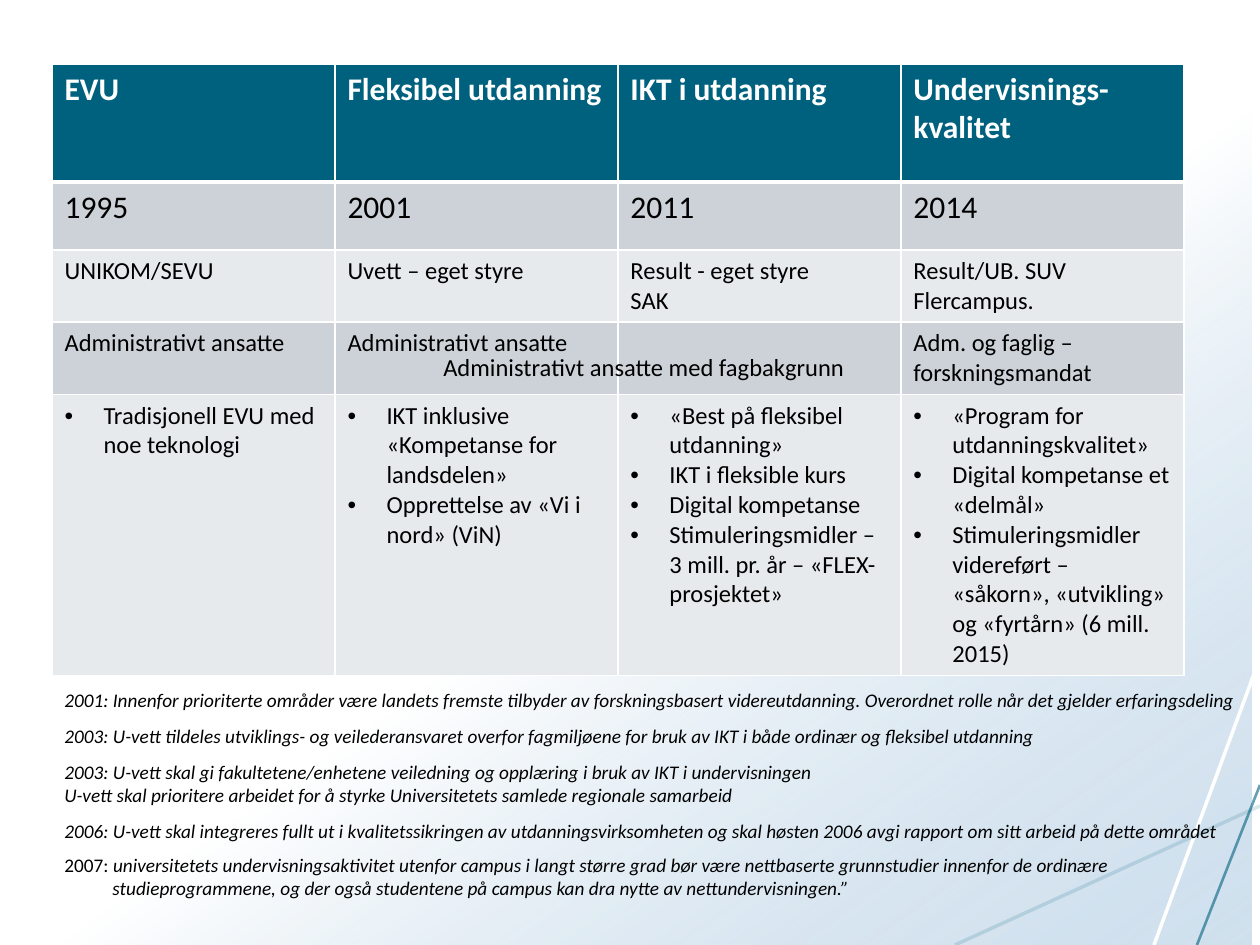
import pptx
import pptx.util
import pptx.dml.color
import pptx.enum.shapes
import pptx.oxml
import pptx.oxml.ns
import lxml.etree

PX = 914400 // 126
FONT = "Calibri"
qn = pptx.oxml.ns.qn
SubElement = lxml.etree.SubElement
rgb = pptx.dml.color.RGBColor.from_string


def add_text(p, text, size=14, color="000000", bold=False, italic=False, hang=0, bullet=False):
    """Add a run; hang is the hanging indent in px. A line break is written as \\v."""
    r = p.add_run()
    first, *rest = text.split("\v")
    r.text = first
    runs = [r]
    for part in rest:
        p.add_line_break()
        r = p.add_run()
        r.text = part
        runs.append(r)
    for r in runs:
        r.font.name, r.font.size = FONT, pptx.util.Pt(size)
        r.font.bold, r.font.italic = bold, italic
        r.font.color.rgb = rgb(color)
    if hang:
        pPr = p._p.get_or_add_pPr()
        pPr.set("marL", str(hang * PX))
        pPr.set("indent", str(-hang * PX))
        if bullet:
            SubElement(pPr, qn("a:buFont")).set("typeface", "Arial")
            SubElement(pPr, qn("a:buChar")).set("char", "•")


def set_alpha(parent, percent):
    """Make the last colour below parent partly transparent."""
    clr = list(parent.iter(qn("a:srgbClr")))[-1]
    SubElement(clr, qn("a:alpha")).set("val", str(percent * 1000))


prs = pptx.Presentation()
prs.slide_width, prs.slide_height = 1260 * PX, 945 * PX
s = prs.slides.add_slide(prs.slide_layouts[6])

# Background gradient and decorative lines
sp = s.shapes.add_shape(pptx.enum.shapes.MSO_SHAPE.RECTANGLE, -9 * PX, 0, 1260 * PX, 945 * PX)
sp.shadow.inherit = False
sp.line.fill.background()
sp.fill.gradient()
sp.fill.gradient_angle = 305
for stop, (pos, color) in zip(sp.fill.gradient_stops, [(0.54, "FFFFFF"), (1, "A9C7E0")]):
    stop.color.rgb = rgb(color)
    stop.position = pos
set_alpha(sp._element.spPr, 54)

for y1, x2, color, width, alpha in [
    (658, 1154, "FFFFFF", 2, 100),
    (806, 955, "15718F", 2, 16),
    (785, 1197, "00617F", 1.5, 60),
]:
    ln = s.shapes.add_connector(pptx.enum.shapes.MSO_CONNECTOR.STRAIGHT,
                                1260 * PX, y1 * PX, x2 * PX, 945 * PX)
    ln.line.color.rgb = rgb(color)
    ln.line.width = pptx.util.Pt(width)
    if alpha < 100:
        set_alpha(ln._element.spPr, alpha)
    SubElement(ln._element.spPr, qn("a:effectLst"))

# Table: one list of paragraphs per cell
rows = [
    [["EVU"], ["Fleksibel utdanning"], ["IKT i utdanning"], ["Undervisnings-kvalitet"]],
    [["1995"], ["2001"], ["2011"], ["2014"]],
    [["UNIKOM/SEVU"], ["Uvett – eget styre"], ["Result - eget styre", "SAK"],
     ["Result/UB. SUV", "Flercampus."]],
    [["Administrativt ansatte"], ["Administrativt ansatte"], [],
     ["Adm. og faglig –forskningsmandat"]],
    [["Tradisjonell EVU med noe teknologi"],
     ["IKT inklusive «Kompetanse for landsdelen»", "Opprettelse av «Vi i nord» (ViN)"],
     ["«Best på fleksibel utdanning»", "IKT i fleksible kurs", "Digital kompetanse",
      "Stimuleringsmidler – 3 mill. pr. år – «FLEX-prosjektet»"],
     ["«Program for utdanningskvalitet»", "Digital kompetanse et «delmål»",
      "Stimuleringsmidler videreført – «såkorn», «utvikling» og «fyrtårn» (6 mill. 2015)"]],
]
heights = [118, 68, 72, 72, 281]
fills = ["00617F", "CCD2D8", "E7EAEC", "CCD2D8", "E7EAEC"]
formats = [dict(size=18, color="FFFFFF", bold=True), dict(size=18), {}, {},
           dict(hang=39, bullet=True)]

tbl = s.shapes.add_table(5, 4, 52 * PX, 64 * PX, 1132 * PX, sum(heights) * PX).table
for col in tbl.columns:
    col.width = 283 * PX
for i, row in enumerate(rows):
    tbl.rows[i].height = heights[i] * PX
    for j, paragraphs in enumerate(row):
        cell = tbl.cell(i, j)
        tcPr = cell._tc.get_or_add_tcPr()
        for side in "LRTB":
            thick = (i, side) in [(0, "B"), (1, "T")]
            border = SubElement(tcPr, qn("a:ln" + side))
            border.set("w", str(pptx.util.Pt(3 if thick else 1)))
            solid = SubElement(border, qn("a:solidFill"))
            SubElement(solid, qn("a:srgbClr")).set("val", "FFFFFF")
        cell.fill.solid()
        cell.fill.fore_color.rgb = rgb(fills[i])
        tf = cell.text_frame
        for k, text in enumerate(paragraphs):
            p = tf.add_paragraph() if k else tf.paragraphs[0]
            add_text(p, text, **formats[i])

# Label across two cells, then the yearly notes: each paragraph is a list of runs
note = dict(size=11, italic=True)
boxes = [
    (431, 346, 431, 43, [[("Administrativt ansatte med fagbakgrunn", {})]]),
    (52, 682, 1198, 36, [[("2001: Innenfor prioriterte områder være landets fremste tilbyder av forskningsbasert videreutdanning. Overordnet rolle når det gjelder erfaringsdeling", note)]]),
    (52, 718, 1002, 36, [[("2003: U-vett tildeles utviklings- og veilederansvaret overfor fagmiljøene for bruk av IKT i både ordinær og fleksibel utdanning", note)]]),
    (52, 754, 780, 59, [
        [("2003: U-vett skal gi fakultetene/enhetene veiledning og opplæring i bruk av IKT i undervisningen", note)],
        [("U-vett skal prioritere arbeidet for å styrke Universitetets samlede regionale samarbeid", note)]]),
    (52, 813, 1189, 36, [[("2006: U-vett skal integreres fullt ut i kvalitetssikringen av utdanningsvirksomheten og skal høsten 2006 avgi rapport om sitt arbeid på dette området", note)]]),
    (52, 847, 1081, 59, [[
        ("2007: ", dict(size=11)),
        ("universitetets undervisningsaktivitet utenfor campus i langt større grad bør være nettbaserte grunnstudier innenfor de ordinære \vstudieprogrammene, og der også studentene på campus kan dra nytte av nettundervisningen.”", dict(note, hang=48))]]),
]
for x, y, w, h, paragraphs in boxes:
    tf = s.shapes.add_textbox(x * PX, y * PX, w * PX, h * PX).text_frame
    tf.word_wrap = False
    for k, runs in enumerate(paragraphs):
        p = tf.add_paragraph() if k else tf.paragraphs[0]
        for text, fmt in runs:
            add_text(p, text, **fmt)

prs.save("out.pptx")
